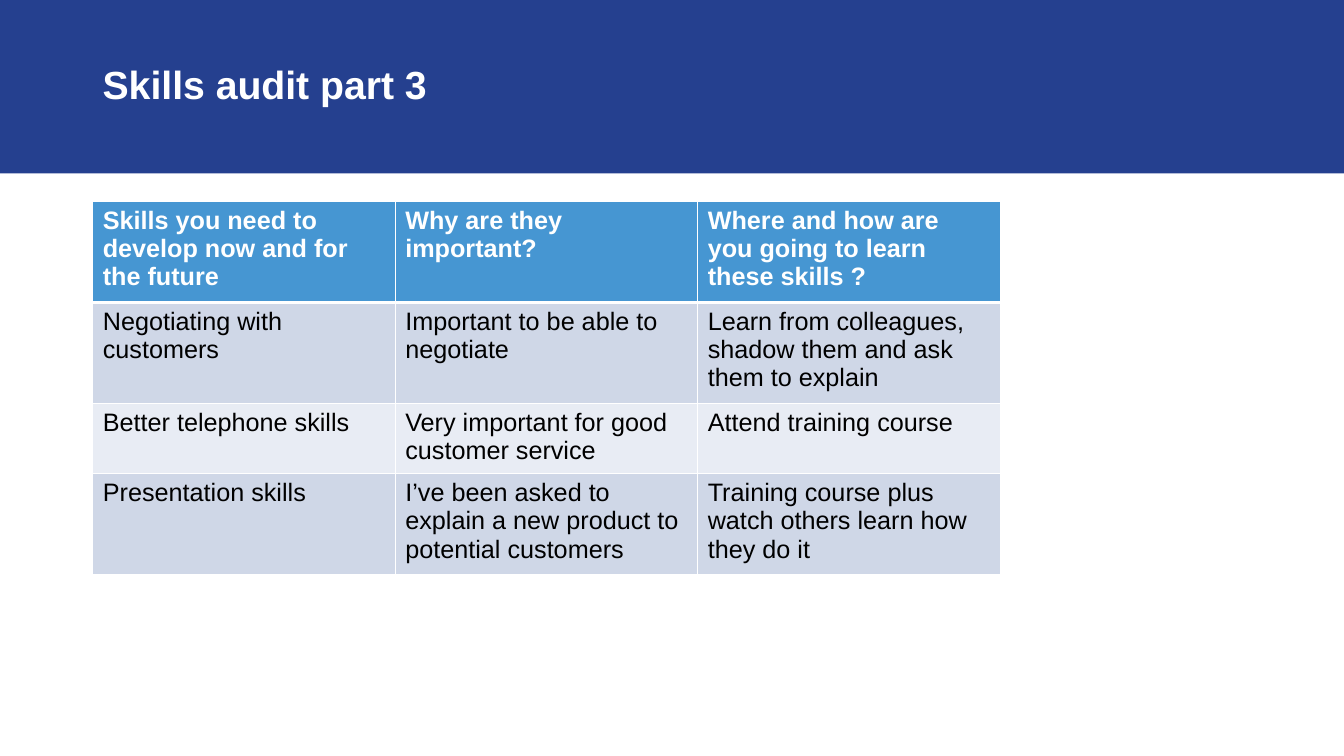
"""Build the skills audit slide: a title banner above a three-column table."""
from dataclasses import dataclass

from lxml.etree import SubElement
from pptx import Presentation
from pptx.dml.color import RGBColor as Rgb
from pptx.enum.shapes import MSO_SHAPE as Shape
from pptx.enum.text import MSO_ANCHOR as Anchor
from pptx.oxml.ns import qn
from pptx.slide import Slide
from pptx.table import _Cell as Cell
from pptx.text.text import TextFrame
from pptx.util import Inches, Pt

COLORS = {
    "banner": "25408F",
    "header": "4696D2",
    "band_dark": "CFD7E7",
    "band_light": "E8ECF4",
    "white": "FFFFFF",
    "black": "000000",
}
LEFT = 0.92
COLUMN_WIDTH = 3


@dataclass(frozen=True)
class SkillRow:
    texts: tuple[str, str, str]
    height: float
    fill: str
    color: str = "black"
    bold: bool = False
    top_line: float = 1
    bottom_line: float = 1


ROWS = (
    SkillRow(
        (
            "Skills you need to develop now and for the future",
            "Why are they important?",
            "Where and how are you going to learn these skills ?",
        ),
        0.93, "header", color="white", bold=True, bottom_line=3,
    ),
    SkillRow(
        (
            "Negotiating with customers",
            "Important to be able to negotiate",
            "Learn from colleagues, shadow them and ask them to explain",
        ),
        1, "band_dark", top_line=3,
    ),
    SkillRow(
        (
            "Better telephone skills",
            "Very important for good customer service",
            "Attend training course",
        ),
        0.7, "band_light",
    ),
    SkillRow(
        (
            "Presentation skills",
            "I’ve been asked to explain a new product to potential customers",
            "Training course plus watch others learn how they do it",
        ),
        1, "band_dark",
    ),
)


def write(frame: TextFrame, text: str, *, size: float, color: str,
          bold: bool = False, spacing: float = 1) -> None:
    frame.word_wrap = True
    paragraph = frame.paragraphs[0]
    paragraph.line_spacing = spacing
    run = paragraph.add_run()
    run.text = text
    run.font.name = "Arial"
    run.font.size = Pt(size)
    run.font.bold = bold
    run.font.color.rgb = Rgb.from_string(COLORS[color])


def add_border(cell: Cell, side: str, width: float) -> None:
    properties = cell._tc.get_or_add_tcPr()
    line = SubElement(properties, qn(f"a:ln{side}"), w=str(Pt(width)))
    SubElement(SubElement(line, qn("a:solidFill")), qn("a:srgbClr"), val=COLORS["white"])


def add_banner(slide: Slide, width: int) -> None:
    banner = slide.shapes.add_shape(Shape.RECTANGLE, 0, 0, width, Inches(1.72))
    banner.shadow.inherit = False
    banner.fill.solid()
    banner.fill.fore_color.rgb = Rgb.from_string(COLORS["banner"])
    banner.line.fill.background()
    title = slide.shapes.add_textbox(Inches(LEFT), Inches(0.14), Inches(11.5), Inches(1.45))
    title.text_frame.vertical_anchor = Anchor.MIDDLE
    write(title.text_frame, "Skills audit part 3",
          size=28, color="white", bold=True, spacing=0.9)


def add_skills_table(slide: Slide, rows: tuple[SkillRow, ...]) -> None:
    column_count = len(rows[0].texts)
    table = slide.shapes.add_table(
        len(rows), column_count, Inches(LEFT), Inches(2),
        Inches(COLUMN_WIDTH * column_count), Inches(sum(row.height for row in rows)),
    ).table
    for column in table.columns:
        column.width = Inches(COLUMN_WIDTH)
    for table_row, row in zip(table.rows, rows):
        table_row.height = Inches(row.height)
        borders = {"L": 1, "R": 1, "T": row.top_line, "B": row.bottom_line}
        for cell, text in zip(table_row.cells, row.texts):
            for side, width in borders.items():
                add_border(cell, side, width)
            cell.fill.solid()
            cell.fill.fore_color.rgb = Rgb.from_string(COLORS[row.fill])
            write(cell.text_frame, text, size=18, color=row.color, bold=row.bold)


def main() -> None:
    deck = Presentation()
    deck.slide_width, deck.slide_height = Inches(13.33), Inches(7.5)
    slide = deck.slides.add_slide(deck.slide_layouts[6])
    add_banner(slide, deck.slide_width)
    add_skills_table(slide, ROWS)
    deck.save("out.pptx")


if __name__ == "__main__":
    main()
